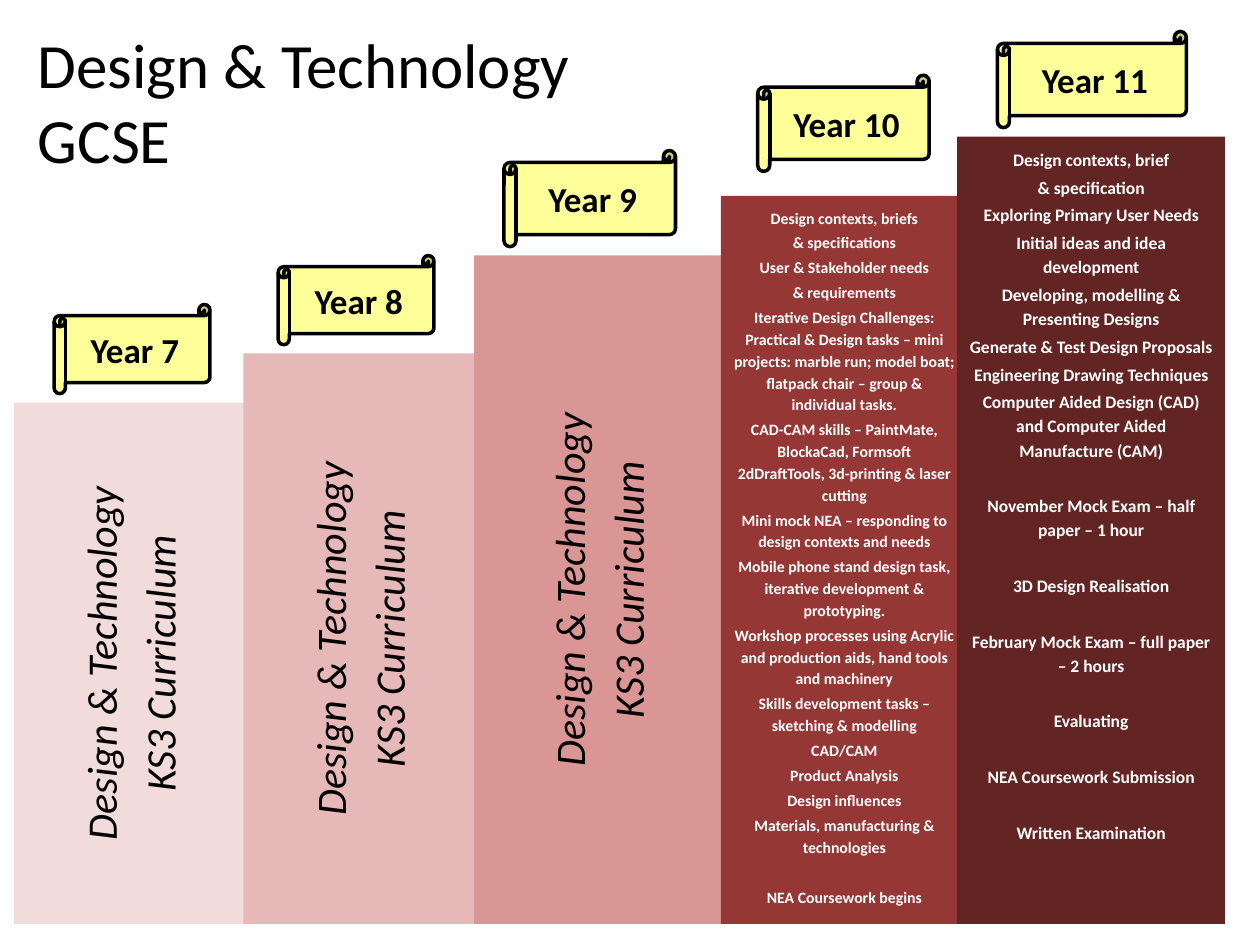
import pptx
import pptx.util
import pptx.dml.color
import pptx.enum.shapes
import pptx.enum.text

Pt = pptx.util.Pt
RGB = pptx.dml.color.RGBColor
SHAPE = pptx.enum.shapes.MSO_SHAPE
ALIGN = pptx.enum.text.PP_ALIGN
ANCHOR = pptx.enum.text.MSO_ANCHOR
FIT = pptx.enum.text.MSO_AUTO_SIZE

BLACK = RGB(0x00, 0x00, 0x00)
WHITE = RGB(0xFF, 0xFF, 0xFF)
CREAM = RGB(0xFF, 0xFF, 0x99)
BLUSH = RGB(0xF2, 0xDC, 0xDB)
PINK = RGB(0xE6, 0xB9, 0xB8)
ROSE = RGB(0xD9, 0x96, 0x94)
BRICK = RGB(0x95, 0x37, 0x35)
WINE = RGB(0x63, 0x25, 0x23)

TITLE = "Design & Technology GCSE"
LOWER = [["Design & Technology", "KS3 Curriculum"]]
TEN = [
    [
        "Design contexts, briefs\u00a0".strip(),
        "& specifications",
        "User & Stakeholder needs",
        "& requirements",
        "Iterative Design Challenges: Practical & Design tasks – mini projects: "
        "marble run; model boat; flatpack chair – group & individual tasks.",
        "CAD-CAM skills – PaintMate, BlockaCad, Formsoft 2dDraftTools, "
        "3d-printing & laser cutting",
        "Mini mock NEA – responding to design contexts and needs",
        "Mobile phone stand design task, iterative development & prototyping.",
        "Workshop processes using Acrylic and production aids, "
        "hand tools and machinery",
        "Skills development tasks – sketching & modelling",
        "CAD/CAM",
        "Product Analysis",
        "Design influences",
        "Materials, manufacturing & technologies",
    ],
    ["NEA Coursework begins"],
]
ELEVEN = [
    [
        "Design contexts, brief",
        "& specification",
        "Exploring Primary User Needs",
        "Initial ideas and idea development",
        "Developing, modelling & Presenting Designs",
        "Generate & Test Design Proposals",
        "Engineering Drawing Techniques",
        "Computer Aided Design (CAD) and Computer Aided Manufacture (CAM)",
    ],
    ["November Mock Exam – half paper – 1 hour"],
    ["3D Design Realisation"],
    ["February Mock Exam – full paper – 2 hours"],
    ["Evaluating"],
    ["NEA Coursework Submission"],
    ["Written Examination"],
]

SIDE = dict(size=24, italic=True, anchor=ANCHOR.MIDDLE, turn=True)
LIST = dict(color=WHITE, bold=True, line=1.15, top=5.4)

# name, bar (left, top, width), fill, scroll (left, top, width, height), text, format
YEARS = [
    ("Year 7", (8, 230, 132), BLUSH, (31, 174, 89, 51), LOWER, SIDE),
    ("Year 8", (139, 202, 132), PINK, (159, 146, 89, 51), LOWER, SIDE),
    ("Year 9", (271, 146, 141), ROSE, (288, 86, 98, 55), LOWER, SIDE),
    ("Year 10", (412, 112, 141), BRICK, (433, 43, 98, 55), TEN, dict(LIST, size=9)),
    ("Year 11", (547, 78, 153), WINE, (570, 18, 108, 55), ELEVEN, dict(LIST, size=10)),
]
FLOOR = 528


def write(shape, groups, size, color=BLACK, bold=False, italic=False, line=None,
          align=ALIGN.CENTER, anchor=ANCHOR.TOP, top=3.6, turn=False):
    frame = shape.text_frame
    frame.word_wrap = True
    frame.auto_size = FIT.NONE
    frame.vertical_anchor = anchor
    frame.margin_top = Pt(top)
    if turn:
        shape.element.txBody.bodyPr.set("vert", "vert270")
    first = True
    for group in groups:
        for row, text in enumerate(group):
            para = frame.paragraphs[0] if first else frame.add_paragraph()
            gap = 0 if first else size * (0.2 if row else 1.8)
            first = False
            para.text = text
            para.alignment = align
            para.space_before = Pt(gap)
            if line:
                para.line_spacing = line
            font = para.font
            font.name = "Calibri"
            font.size = Pt(size)
            font.bold = bold
            font.italic = italic
            font.color.rgb = color


def draw(slide, kind, box, fill, edge=None):
    shape = slide.shapes.add_shape(kind, *[Pt(n) for n in box])
    shape.shadow.inherit = False
    shape.fill.solid()
    shape.fill.fore_color.rgb = fill
    if edge is None:
        shape.line.fill.background()
    else:
        shape.line.color.rgb = edge
        shape.line.width = Pt(2)
    return shape


def main():
    deck = pptx.Presentation()
    deck.slide_width, deck.slide_height = Pt(720), Pt(540)
    slide = deck.slides.add_slide(deck.slide_layouts[5])

    title = slide.shapes.title
    title.left, title.top, title.width, title.height = Pt(14.4), Pt(10.8), Pt(346), Pt(94)
    write(title, [[TITLE]], size=36, align=ALIGN.LEFT)

    for name, (left, top, wide), fill, place, text, form in YEARS:
        bar = draw(slide, SHAPE.RECTANGLE, (left, top, wide, FLOOR - top), fill)
        write(bar, text, **form)
        scroll = draw(slide, SHAPE.HORIZONTAL_SCROLL, place, CREAM, BLACK)
        write(scroll, [[name]], size=20, bold=True, anchor=ANCHOR.MIDDLE)

    deck.save("out.pptx")


if __name__ == "__main__":
    main()
